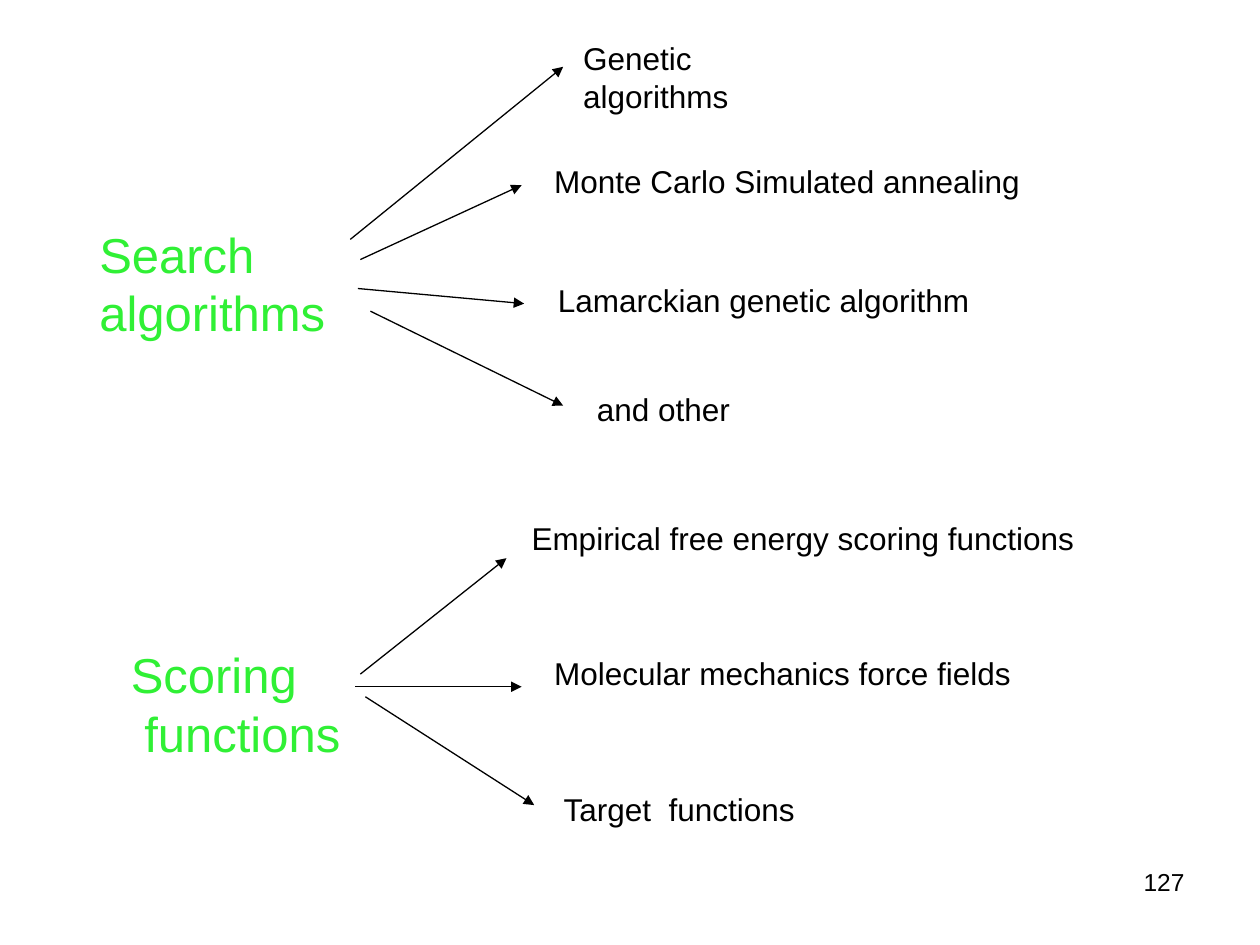
from dataclasses import dataclass

from lxml.etree import SubElement
from pptx import Presentation
from pptx.dml.color import RGBColor
from pptx.enum.shapes import MSO_CONNECTOR
from pptx.enum.text import MSO_AUTO_SIZE, PP_ALIGN
from pptx.oxml.ns import qn
from pptx.slide import Slide
from pptx.util import Inches, Pt


@dataclass(frozen=True)
class Theme:
    font: str = "Arial"
    heading_color: RGBColor = RGBColor(0x30, 0xF0, 0x35)
    ink: RGBColor = RGBColor(0, 0, 0)
    heading_size: int = 28
    method_size: int = 18
    number_size: int = 14
    arrow_width: float = 0.75


@dataclass(frozen=True)
class Label:
    lines: tuple[str, ...]
    left: float
    top: float
    width: float
    height: float = 0.4


@dataclass(frozen=True)
class Arrow:
    start: tuple[float, float]
    end: tuple[float, float]


@dataclass(frozen=True)
class Branch:
    method: Label
    arrow: Arrow


@dataclass(frozen=True)
class Topic:
    heading: Label
    branches: tuple[Branch, ...]


THEME = Theme()

TOPICS = (
    Topic(
        Label(("Search", "algorithms"), 0.69, 1.73, 2, 1.03),
        (
            Branch(Label(("Genetic algorithms",), 4.53, 0.26, 2.28),
                   Arrow((2.78, 1.9), (4.47, 0.53))),
            Branch(Label(("Monte Carlo Simulated annealing",), 4.3, 1.24, 3.9),
                   Arrow((2.86, 2.06), (4.14, 1.47))),
            Branch(Label(("Lamarckian genetic algorithm",), 4.33, 2.18, 3.53),
                   Arrow((2.84, 2.29), (4.16, 2.41))),
            Branch(Label((" and other",), 4.57, 3.05, 1.33),
                   Arrow((2.94, 2.47), (4.47, 3.22))),
        ),
    ),
    Topic(
        Label(("Scoring", " functions"), 0.94, 5.07, 1.87, 1.03),
        (
            Branch(Label(("Empirical free energy scoring functions",), 4.12, 4.07, 4.58),
                   Arrow((2.86, 5.35), (4.02, 4.43))),
            Branch(Label(("Molecular mechanics force fields",), 4.3, 5.14, 3.83),
                   Arrow((2.82, 5.45), (4.14, 5.45))),
            Branch(Label((" Target  functions",), 4.31, 6.22, 2.13),
                   Arrow((2.9, 5.53), (4.24, 6.39))),
        ),
    ),
)

SLIDE_NUMBER = Label(("127",), 7.17, 6.83, 2.33, 0.52)


def draw_label(slide: Slide, label: Label, size: int, color: RGBColor,
               align: PP_ALIGN = PP_ALIGN.LEFT, wrap: bool = False) -> None:
    box = slide.shapes.add_textbox(Inches(label.left), Inches(label.top),
                                   Inches(label.width), Inches(label.height))
    frame = box.text_frame
    frame.word_wrap = wrap
    frame.auto_size = MSO_AUTO_SIZE.NONE if wrap else MSO_AUTO_SIZE.SHAPE_TO_FIT_TEXT
    for index, line in enumerate(label.lines):
        paragraph = frame.add_paragraph() if index else frame.paragraphs[0]
        paragraph.alignment = align
        run = paragraph.add_run()
        run.text = line
        run.font.name = THEME.font
        run.font.size = Pt(size)
        run.font.color.rgb = color


def draw_arrow(slide: Slide, arrow: Arrow) -> None:
    connector = slide.shapes.add_connector(
        MSO_CONNECTOR.STRAIGHT, *map(Inches, arrow.start + arrow.end))
    connector.line.color.rgb = THEME.ink
    connector.line.width = Pt(THEME.arrow_width)
    SubElement(connector.line._get_or_add_ln(), qn("a:tailEnd"), type="triangle")
    SubElement(connector._element.spPr, qn("a:effectLst"))


def draw_topic(slide: Slide, topic: Topic) -> None:
    draw_label(slide, topic.heading, THEME.heading_size, THEME.heading_color)
    for branch in topic.branches:
        draw_label(slide, branch.method, THEME.method_size, THEME.ink)
        draw_arrow(slide, branch.arrow)


def main() -> None:
    presentation = Presentation()
    presentation.slide_width = Inches(10)
    presentation.slide_height = Inches(7.5)
    slide = presentation.slides.add_slide(presentation.slide_layouts[6])
    for topic in TOPICS:
        draw_topic(slide, topic)
    draw_label(slide, SLIDE_NUMBER, THEME.number_size, THEME.ink, PP_ALIGN.RIGHT, True)
    presentation.save("out.pptx")


if __name__ == "__main__":
    main()
